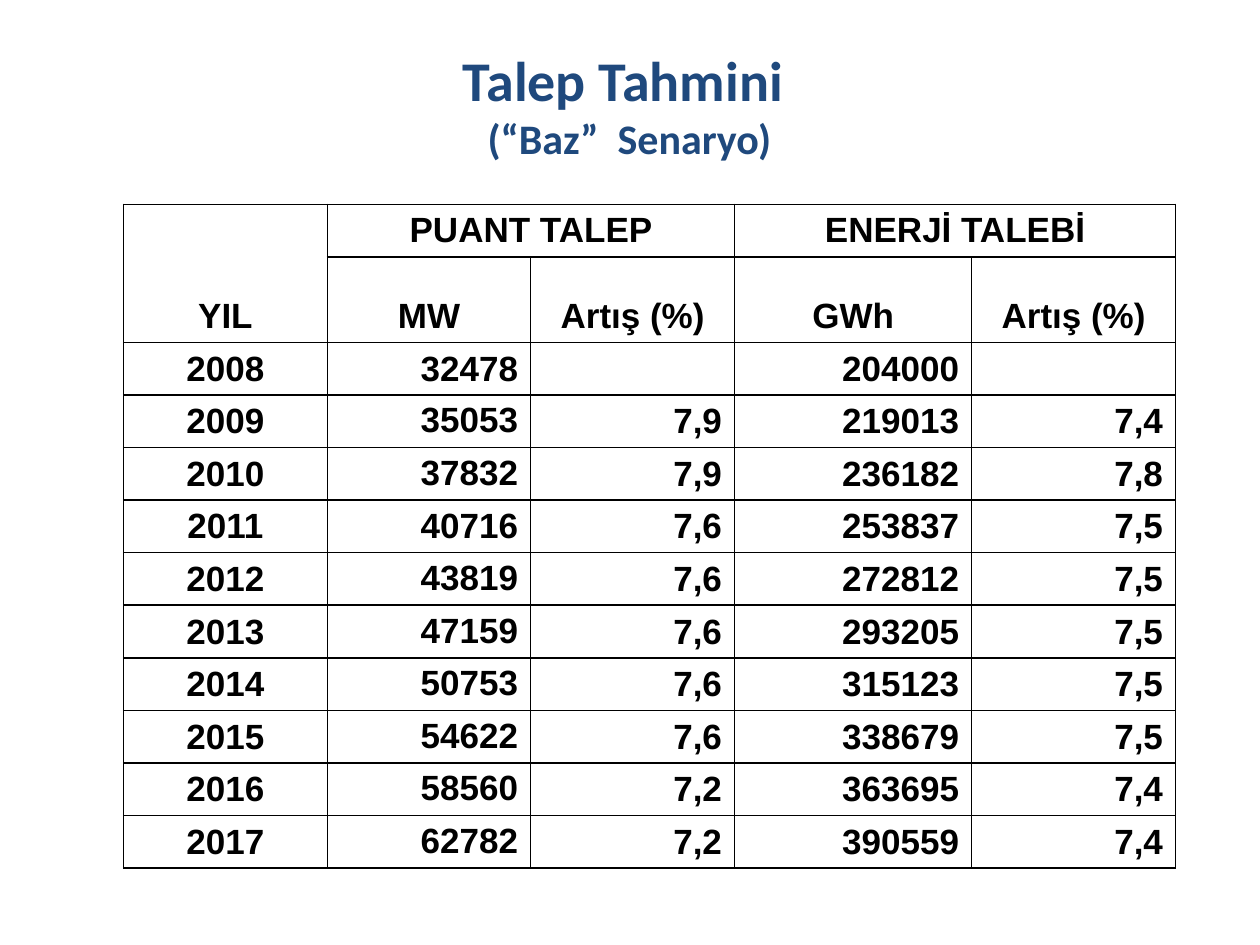
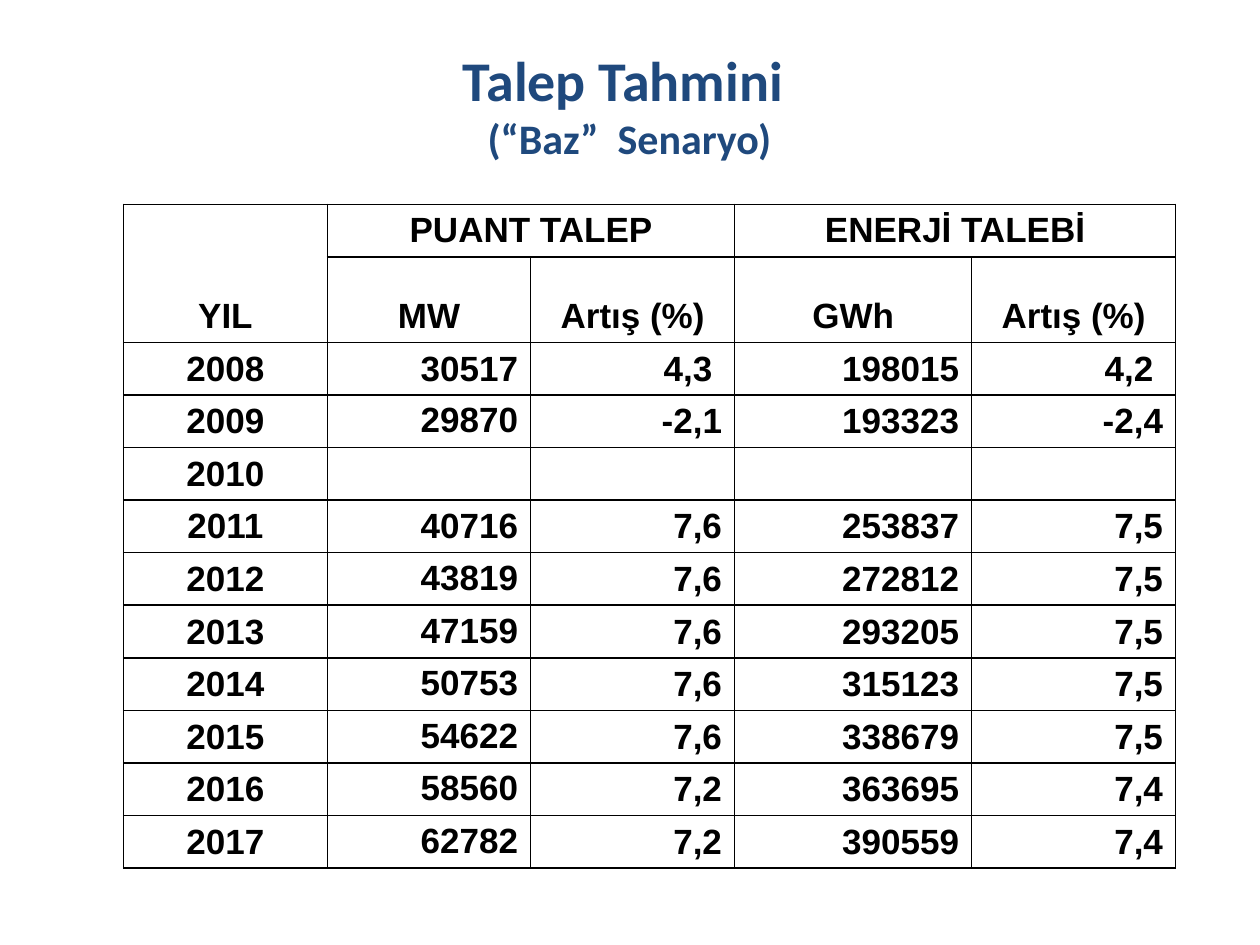
from copy import deepcopy

from lxml import etree
from pptx import Presentation
from pptx.dml.color import RGBColor
from pptx.enum.text import MSO_ANCHOR, MSO_AUTO_SIZE, PP_ALIGN
from pptx.oxml.ns import qn
from pptx.util import Cm, Pt

TOP, MIDDLE, BOTTOM = MSO_ANCHOR.TOP, MSO_ANCHOR.MIDDLE, MSO_ANCHOR.BOTTOM
CENTER, RIGHT = PP_ALIGN.CENTER, PP_ALIGN.RIGHT
FIXED = MSO_AUTO_SIZE.NONE

NAVY = RGBColor(0x1F, 0x49, 0x7D)
BLACK = RGBColor(0, 0, 0)
WHITE = RGBColor(255, 255, 255)

HEAD = {"name": "Calibri", "size": Pt(32), "bold": True, "color": NAVY}
SUBHEAD = {**HEAD, "size": Pt(24)}
BODY = {"name": "Arial", "size": Pt(20), "bold": True, "color": BLACK}

TITLE_ONLY = 5
WIDTHS = [4.11, 4.1, 4.11, 4.78, 4.11]
ROW, UNIT_ROW = 1.06, 1.72

GROUPS = ["YIL", "PUANT TALEP", "", "ENERJİ TALEBİ", ""]
UNITS = ["", "MW", "Artış (%)", "GWh", "Artış (%)"]
MERGES = [(0, 0, 1, 0), (0, 1, 0, 2), (0, 3, 0, 4)]

PLANNED = [
    ["2008", "32478", "", "204000", ""],
    ["2009", "35053", "7,9", "219013", "7,4"],
    ["2010", "37832", "7,9", "236182", "7,8"],
]
ACTUAL = [
    ["2008", "30517", "4,3 ", "198015", "4,2 "],
    ["2009", "29870", "-2,1", "193323", "-2,4"],
    ["2010", "", "", "", ""],
]
LATER = [
    ["2011", "40716", "7,6", "253837", "7,5"],
    ["2012", "43819", "7,6", "272812", "7,5"],
    ["2013", "47159", "7,6", "293205", "7,5"],
    ["2014", "50753", "7,6", "315123", "7,5"],
    ["2015", "54622", "7,6", "338679", "7,5"],
    ["2016", "58560", "7,2", "363695", "7,4"],
    ["2017", "62782", "7,2", "390559", "7,4"],
]


class Deck:
    def __init__(self):
        self.prs = Presentation()
        self.prs.slide_width, self.prs.slide_height = Cm(25.4), Cm(19.05)
        self.slide = None

    def start(self):
        """Begin a new current slide."""
        layout = self.prs.slide_layouts[TITLE_ONLY]
        self.slide = self.prs.slides.add_slide(layout)

    def add_text(self, para, text, style):
        run = para.add_run()
        run.text = text
        for key, value in style.items():
            if key == "color":
                run.font.color.rgb = value
            else:
                setattr(run.font, key, value)
        return run

    def title(self, main, sub):
        shape = self.slide.shapes.title
        shape.left, shape.top = Cm(0.89), Cm(0.71)
        shape.width, shape.height = Cm(23.6), Cm(2.79)
        frame = shape.text_frame
        frame.auto_size, frame.vertical_anchor = FIXED, MIDDLE
        para = frame.paragraphs[0]
        para.alignment = CENTER
        run = self.add_text(para, main, HEAD)
        para.add_line_break()
        # the break takes the size of the line it ends
        para._p[-1].append(deepcopy(run._r.rPr))
        self.add_text(para, sub, SUBHEAD)

    def border(self, cell):
        props = cell._tc.get_or_add_tcPr()
        for side in ("lnL", "lnR", "lnT", "lnB"):
            line = etree.SubElement(props, qn(f"a:{side}"), w=str(Pt(1)))
            fill = etree.SubElement(line, qn("a:solidFill"))
            etree.SubElement(fill, qn("a:srgbClr"), val=str(BLACK))

    def cell(self, cell, text, align, anchor):
        self.border(cell)
        cell.fill.solid()
        cell.fill.fore_color.rgb = WHITE
        cell.vertical_anchor = anchor
        para = cell.text_frame.paragraphs[0]
        para.alignment = align
        if text:
            self.add_text(para, text, BODY)

    def table(self, years):
        rows = [GROUPS, UNITS, *years]
        heights = [ROW, UNIT_ROW] + [ROW] * len(years)
        frame = self.slide.shapes.add_table(
            len(rows), len(WIDTHS), Cm(2.49), Cm(4.12),
            Cm(sum(WIDTHS)), Cm(sum(heights)))
        table = frame.table
        table.first_row = table.horz_banding = False
        for col, width in zip(table.columns, WIDTHS):
            col.width = Cm(width)
        for row, height in zip(table.rows, heights):
            row.height = Cm(height)
        for r, row in enumerate(rows):
            for c, text in enumerate(row):
                align = CENTER if r < 2 or c == 0 else RIGHT
                anchor = BOTTOM
                if r == 0 and c > 0:
                    anchor = MIDDLE
                elif r > 2 and c == 1:
                    anchor = TOP
                self.cell(table.cell(r, c), text, align, anchor)
        for top, left, bottom, right in MERGES:
            table.cell(top, left).merge(table.cell(bottom, right))


def main():
    deck = Deck()
    for early in (PLANNED, ACTUAL):
        deck.start()
        deck.title("Talep Tahmini ", "(“Baz”  Senaryo)")
        deck.table(early + LATER)
    deck.prs.save("out.pptx")


if __name__ == "__main__":
    main()
